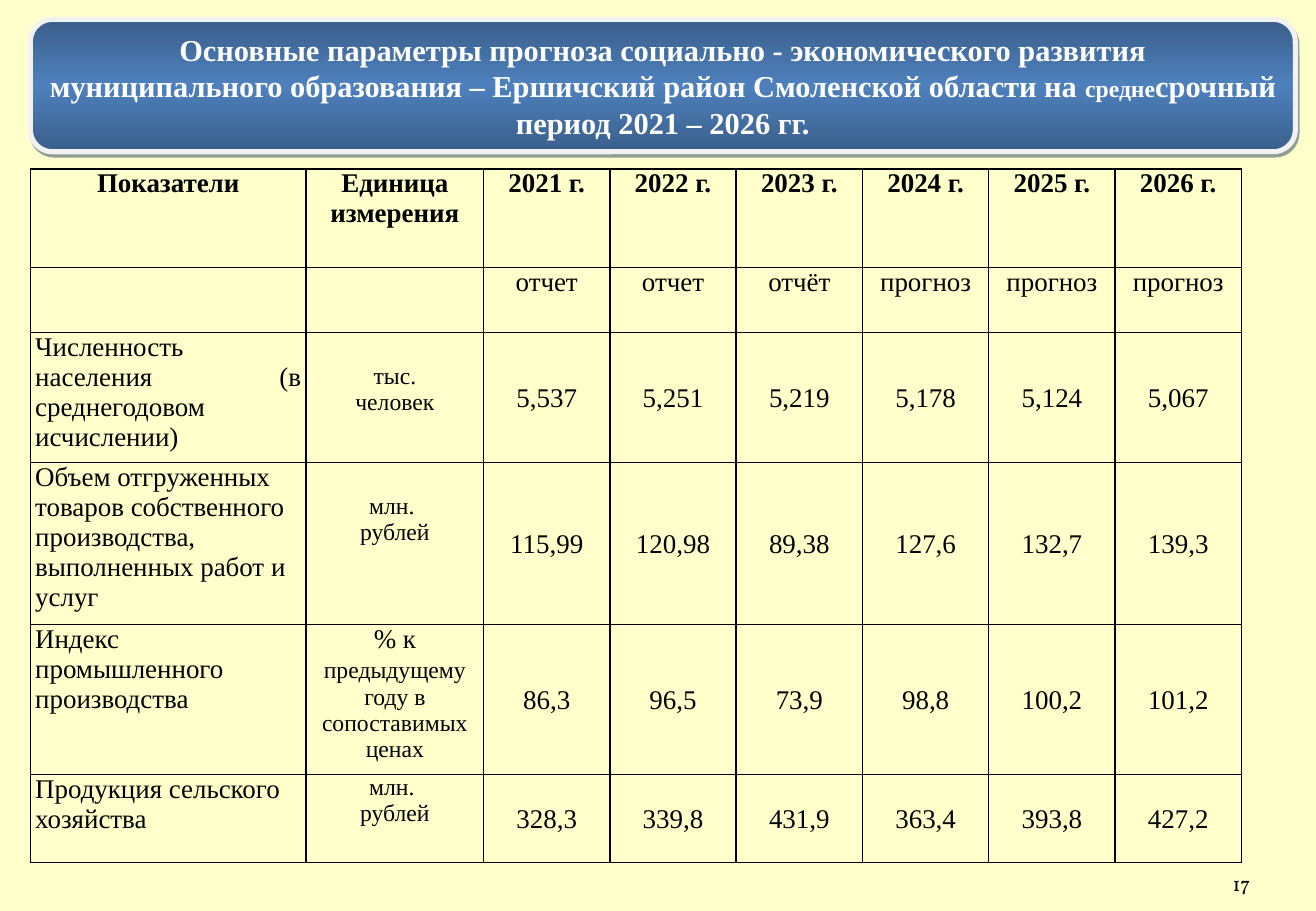
import pptx
import pptx.util
import pptx.dml.color
import pptx.enum.shapes
import pptx.enum.text
import pptx.oxml
import pptx.oxml.ns

Pt = pptx.util.Pt
Inches = pptx.util.Inches
Align = pptx.enum.text.PP_ALIGN
Anchor = pptx.enum.text.MSO_ANCHOR
qn = pptx.oxml.ns.qn
NS = pptx.oxml.ns.nsdecls("a")


def rgb(value):
    return pptx.dml.color.RGBColor.from_string(value)


def write(frame, text, size=16, color="000000", font="Times New Roman", bold=False, align=Align.CENTER):
    for index, line in enumerate(text):
        paragraph = frame.paragraphs[0] if index == 0 else frame.add_paragraph()
        paragraph.alignment = align
        for words, points in [(line, size)] if isinstance(line, str) else line:
            run = paragraph.add_run()
            run.text = words
            run.font.size = Pt(points)
            run.font.name = font
            run.font.bold = bold
            run.font.color.rgb = rgb(color)


deck = pptx.Presentation()
deck.slide_width = Inches(10.83)
deck.slide_height = Inches(7.5)
slide = deck.slides.add_slide(deck.slide_layouts[6])
slide.background.fill.solid()
slide.background.fill.fore_color.rgb = rgb("FFFFCC")
column = deck.slide_width / 100
row = deck.slide_height / 100
left = int(2.31 * column)

page_number = slide.shapes.add_textbox(int(86.7 * column), int(93.6 * row), int(8.31 * column), int(5.33 * row)).text_frame
page_number.word_wrap = True
page_number.margin_left = page_number.margin_right = 0
page_number.vertical_anchor = Anchor.BOTTOM
write(page_number, ["17"], size=12, font="Vollkorn", align=Align.RIGHT)

banner = slide.shapes.add_shape(
    pptx.enum.shapes.MSO_SHAPE.FLOWCHART_ALTERNATE_PROCESS,
    left, int(2.13 * row), int(96.12 * column), int(14.53 * row))
banner.line.color.rgb = rgb("F2F2F2")
banner.line.width = Pt(3)
banner.fill.gradient()
banner.fill.gradient_angle = 90
stops = banner._element.spPr.find(qn("a:gradFill")).find(qn("a:gsLst"))
stops.clear()
for position, shade in [(0, 50), (50, 100), (100, 50)]:
    stops.append(pptx.oxml.parse_xml(
        f'<a:gs {NS} pos="{position * 1000}"><a:srgbClr val="4F81BD">'
        f'<a:shade val="{shade * 1000}"/></a:srgbClr></a:gs>'))
banner.shadow.inherit = False
banner._element.spPr.find(qn("a:effectLst")).append(pptx.oxml.parse_xml(
    f'<a:outerShdw {NS} blurRad="0" dist="{Pt(2.2)}" dir="{63 * 60000}" algn="ctr" rotWithShape="0">'
    '<a:srgbClr val="243F60"><a:alpha val="50000"/></a:srgbClr></a:outerShdw>'))
banner.text_frame.word_wrap = True
banner.text_frame.vertical_anchor = Anchor.MIDDLE
write(banner.text_frame, [
    "Основные параметры прогноза социально - экономического развития",
    [("муниципального образования – Ершичский район Смоленской области на ", 18),
     ("средне", 14), ("срочный период 2021 – 2026 гг.", 18)],
], size=18, color="FFFFFF", bold=True)

years = [f"{year} г." for year in range(2021, 2027)]
stages = ["отчет", "отчет", "отчёт", "прогноз", "прогноз", "прогноз"]
indicators = [
    (["Численность населения (в среднегодовом исчислении)"], ["тыс.", "человек"],
     ["5,537", "5,251", "5,219", "5,178", "5,124", "5,067"]),
    (["Объем отгруженных товаров собственного производства, выполненных работ и услуг"], ["млн. ", "рублей"],
     ["115,99", "120,98", "89,38", "127,6", "132,7", "139,3"]),
    (["Индекс промышленного", "производства"],
     [[("% к ", 16), ("предыдущему", 14), (" ", 16), ("году в сопоставимых ценах", 14)]],
     ["86,3", "96,5", "73,9", "98,8", "100,2", "101,2"]),
    (["Продукция сельского хозяйства"], ["млн. ", "рублей"],
     ["328,3", "339,8", "431,9", "363,4", "393,8", "427,2"]),
]
widths = [20.96, 13.48] + [9.6] * len(years)
heights = [10.86, 7.13, 14.27, 17.78, 16.35, 9.66]
forecast = slide.shapes.add_table(
    len(heights), len(widths), left, int(18.53 * row),
    int(sum(widths) * column), int(sum(heights) * row)).table
forecast.first_row = forecast.horz_banding = False
for index, width in enumerate(widths):
    forecast.columns[index].width = int(width * column)
for index, height in enumerate(heights):
    forecast.rows[index].height = int(height * row)

for cell in forecast.iter_cells():
    cell.margin_left = cell.margin_right = Inches(0.04)
    cell.margin_top = cell.margin_bottom = 0
    for side in ["lnL", "lnR", "lnT", "lnB"]:
        cell._tc.get_or_add_tcPr().append(pptx.oxml.parse_xml(
            f'<a:{side} {NS} w="{Pt(1)}"><a:solidFill><a:srgbClr val="000000"/></a:solidFill></a:{side}>'))
    cell.fill.background()

for index, heading in enumerate(["Показатели", "Единица измерения"] + years):
    write(forecast.cell(0, index).text_frame, [heading], bold=True)
for index, stage in enumerate(stages, 2):
    write(forecast.cell(1, index).text_frame, [stage])
for line, (indicator, unit, values) in enumerate(indicators, 2):
    write(forecast.cell(line, 0).text_frame, indicator, align=Align.JUSTIFY if line == 2 else Align.LEFT)
    unit_cell = forecast.cell(line, 1)
    unit_cell.margin_top = Inches(0.25) if line < 4 else 0
    write(unit_cell.text_frame, unit, size=14)
    for index, value in enumerate(values, 2):
        value_cell = forecast.cell(line, index)
        value_cell.vertical_anchor = Anchor.MIDDLE
        value_cell.margin_left = value_cell.margin_right = value_cell.margin_top = Inches(0.01)
        write(value_cell.text_frame, [value])

deck.save("out.pptx")
